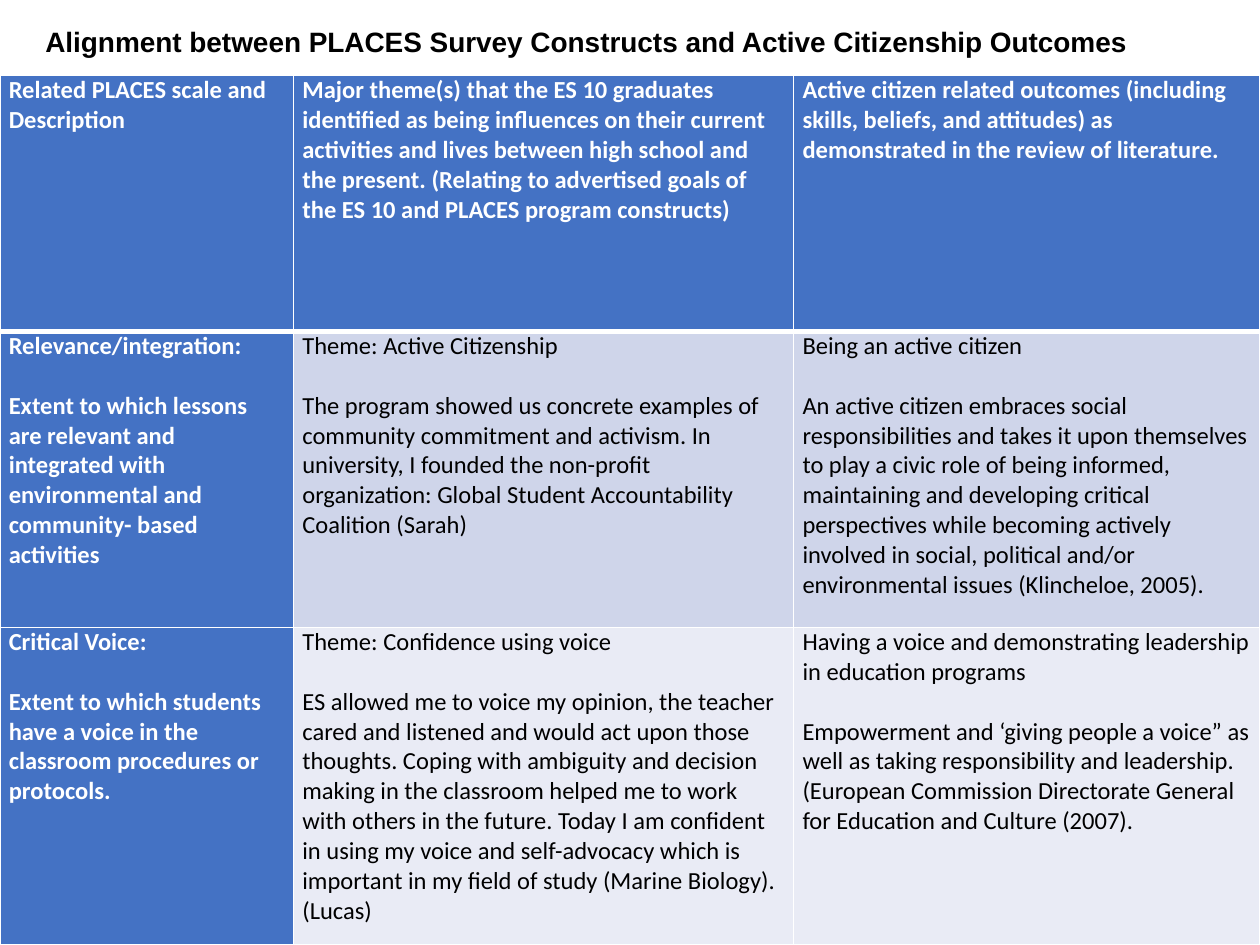
from lxml.etree import SubElement
from pptx import Presentation
from pptx.dml.color import RGBColor
from pptx.enum.text import MSO_ANCHOR, MSO_AUTO_SIZE, PP_ALIGN
from pptx.oxml.ns import qn
from pptx.util import Inches, Pt

COLORS = {
    "header": "4472C4",
    "band_dark": "CFD5EA",
    "band_light": "E9EBF5",
    "white": "FFFFFF",
    "black": "000000",
}

TITLE = "Alignment between PLACES Survey Constructs and Active Citizenship Outcomes"

# Each cell is a list of paragraphs
ROWS = [
    [
        ["Related PLACES scale and Description"],
        ["Major theme(s) that the ES 10 graduates identified as being influences "
         "on their current activities and lives between high school and the present. "
         "(Relating to advertised goals of the ES 10 and PLACES program constructs)"],
        ["Active citizen related outcomes (including skills, beliefs, and attitudes) "
         "as demonstrated in the review of literature."],
    ],
    [
        ["Relevance/integration:",
         "Extent to which lessons are relevant and integrated with environmental "
         "and community- based activities"],
        ["Theme: Active Citizenship",
         "The program showed us concrete examples of community commitment and "
         "activism. In university, I founded the non-profit organization: "
         "Global Student Accountability Coalition (Sarah)"],
        ["Being an active citizen",
         "An active citizen embraces social responsibilities and takes it upon "
         "themselves to play a civic role of being informed, maintaining and "
         "developing critical perspectives while becoming actively involved in "
         "social, political and/or environmental issues (Klincheloe, 2005)."],
    ],
    [
        ["Critical Voice:",
         "Extent to which students have a voice in the classroom procedures or "
         "protocols."],
        ["Theme: Confidence using voice",
         "ES allowed me to voice my opinion, the teacher cared and listened and "
         "would act upon those thoughts. Coping with ambiguity and decision making "
         "in the classroom helped me to work with others in the future. Today I am "
         "confident in using my voice and self-advocacy which is important in my "
         "field of study (Marine Biology). (Lucas)"],
        ["Having a voice and demonstrating leadership in education programs",
         "Empowerment and ‘giving people a voice” as well as taking responsibility "
         "and leadership. (European Commission Directorate General for Education "
         "and Culture (2007)."],
    ],
]
COL_WIDTHS = [2.33, 3.97, 3.7]
ROW_HEIGHTS = [2.03, 2.35, 2.52]
TABLE_TOP = 0.6


def rgb(name):
    return RGBColor.from_string(COLORS[name])


def style_run(r, font, size, color, bold):
    r.font.name, r.font.size, r.font.bold = font, Pt(size), bold
    r.font.color.rgb = rgb(color)


def set_borders(cell, bottom):
    tcPr = cell._tc.get_or_add_tcPr()
    for side, width in (("L", 1), ("R", 1), ("T", 1), ("B", bottom)):
        ln = SubElement(tcPr, qn(f"a:ln{side}"), w=str(Pt(width)))
        fill = SubElement(ln, qn("a:solidFill"))
        SubElement(fill, qn("a:srgbClr"), val=COLORS["white"])


def fill_cell(cell, paragraphs, row, col):
    heading = row == 0 or col == 0
    set_borders(cell, 3 if row == 0 else 1)
    cell.fill.solid()
    band = "band_dark" if row % 2 else "band_light"
    cell.fill.fore_color.rgb = rgb("header" if heading else band)
    cell.margin_left = cell.margin_right = Inches(0.07)
    cell.margin_top = cell.margin_bottom = 0
    tf = cell.text_frame
    tf.text = "\n".join(paragraphs)
    for p in tf.paragraphs:
        style_run(p.runs[0], "Calibri", 14, "white" if heading else "black", heading)
    # One line of space between a cell's heading and its body
    for p in tf.paragraphs[:-1]:
        p.space_after = Pt(17)


prs = Presentation()
prs.slide_width, prs.slide_height = Inches(10), Inches(7.5)
s = prs.slides.add_slide(prs.slide_layouts[5])

# Title
title = s.shapes.title
title.left, title.top = Inches(0.26), Inches(0.13)
title.width, title.height = Inches(9.74), Inches(0.39)
tf = title.text_frame
tf.text = TITLE
tf.word_wrap = True
tf.auto_size = MSO_AUTO_SIZE.NONE
tf.vertical_anchor = MSO_ANCHOR.MIDDLE
p = tf.paragraphs[0]
p.alignment = PP_ALIGN.LEFT
style_run(p.runs[0], "Arial", 16, "black", True)

# Alignment table
table = s.shapes.add_table(
    len(ROWS), len(COL_WIDTHS), 0, Inches(TABLE_TOP),
    Inches(sum(COL_WIDTHS)), Inches(sum(ROW_HEIGHTS)),
).table
for column, width in zip(table.columns, COL_WIDTHS):
    column.width = Inches(width)
for i, (cells, height) in enumerate(zip(ROWS, ROW_HEIGHTS)):
    table.rows[i].height = Inches(height)
    for j, paragraphs in enumerate(cells):
        fill_cell(table.cell(i, j), paragraphs, i, j)

prs.save("out.pptx")
